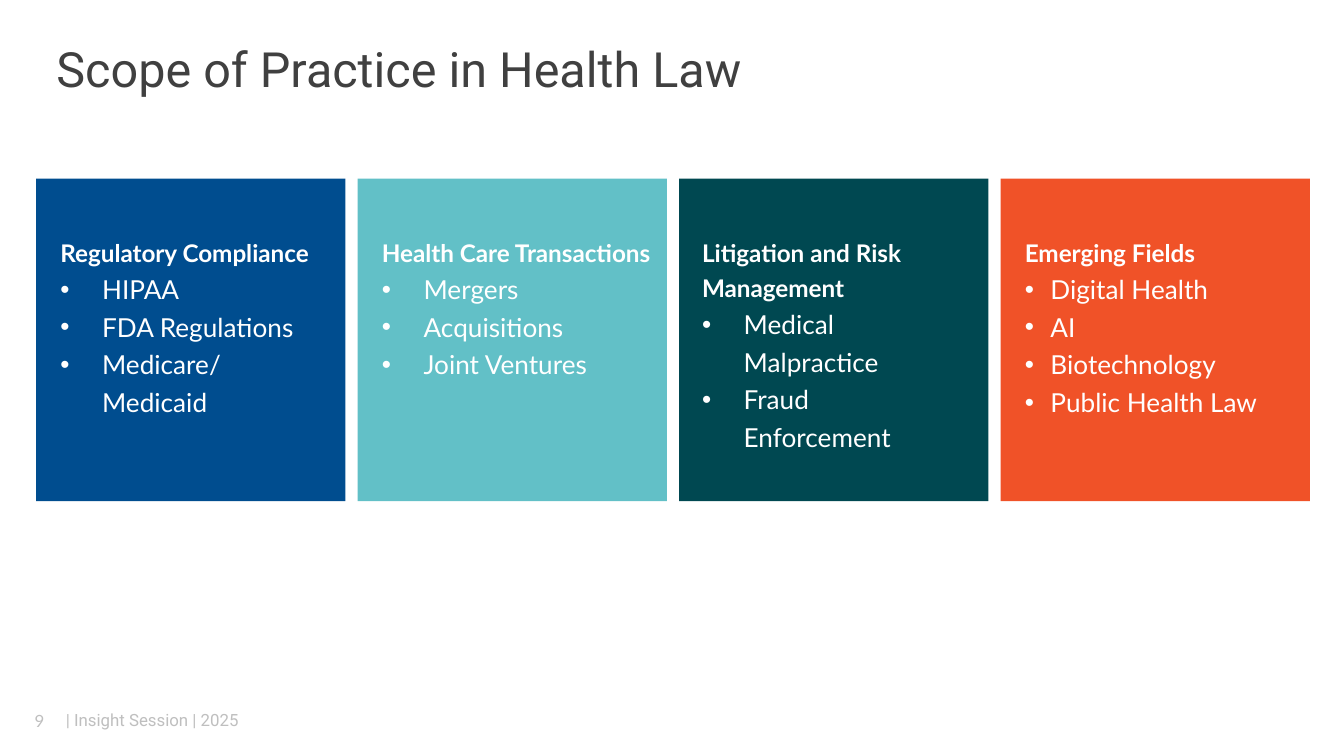
from lxml.etree import SubElement
from pptx import Presentation
from pptx.dml.color import RGBColor
from pptx.enum.shapes import MSO_SHAPE as Shape
from pptx.enum.text import MSO_ANCHOR as Anchor, PP_ALIGN as Align
from pptx.oxml.ns import qn
from pptx.util import Inches, Pt

COLUMNS = 100  # square grid cells, a tenth of an inch each
ROWS = COLUMNS * 9 / 16

# Fill, heading, bullet hang, text inset, text width, text height, items
CARDS = [
    ("004D8F", "Regulatory Compliance", 3.1, 1.8, 19.3, 11.9,
     ["HIPAA", "FDA Regulations", "Medicare/Medicaid"]),
    ("62C0C7", "Health Care Transactions", 3.1, 1.8, 20.7, 11.9,
     ["Mergers", "Acquisitions", "Joint Ventures"]),
    ("004851", "Litigation and Risk Management", 3.1, 1.7, 19.3, 15,
     ["Medical Malpractice", "Fraud Enforcement"]),
    ("F05228", "Emerging Fields", 1.9, 1.8, 19.3, 17.8,
     ["Digital Health", "AI", "Biotechnology", "Public Health Law"]),
]


def color(value):
    return RGBColor.from_string(value)


def write(paragraph, text, size=14, font="Lato", fill="FFFFFF", bold=False,
          align=Align.LEFT, spacing=1.0):
    paragraph.alignment = align
    paragraph.line_spacing = spacing
    run = paragraph.add_run()
    run.text = text
    run.font.name, run.font.size, run.font.bold = font, Pt(size), bold
    run.font.color.rgb = color(fill)


class SlideBuilder:
    footer = {"size": 9, "fill": "BFBFBF"}
    body = {"spacing": 1.2}

    def __init__(self, presentation):
        self.cell_width = presentation.slide_width / COLUMNS
        self.cell_height = presentation.slide_height / ROWS
        self.slide = presentation.slides.add_slide(presentation.slide_layouts[6])

    def place(self, column, row, width, height):
        return (round(column * self.cell_width), round(row * self.cell_height),
                round(width * self.cell_width), round(height * self.cell_height))

    def panel(self, area, fill):
        shape = self.slide.shapes.add_shape(Shape.RECTANGLE, *self.place(*area))
        shape.shadow.inherit = False
        shape.fill.solid()
        shape.fill.fore_color.rgb = color(fill)
        shape.line.fill.background()

    def frame(self, area, side=0, edge=0, anchor=Anchor.MIDDLE):
        frame = self.slide.shapes.add_textbox(*self.place(*area)).text_frame
        frame.word_wrap = True
        frame.vertical_anchor = anchor
        frame.margin_left = frame.margin_right = Inches(side)
        frame.margin_top = frame.margin_bottom = Inches(edge)
        return frame

    def label(self, area, text, side=0, edge=0, **style):
        write(self.frame(area, side, edge).paragraphs[0], text, **style)

    def bullet(self, paragraph, hang):
        properties = paragraph._p.get_or_add_pPr()
        indent = round(hang * self.cell_width)
        properties.set("marL", str(indent))
        properties.set("indent", str(-indent))
        SubElement(properties, qn("a:buFont"), typeface="Arial")
        SubElement(properties, qn("a:buChar"), char="•")

    def card_text(self, area, heading, items, hang):
        frame = self.frame(area, edge=0.05, anchor=Anchor.TOP)
        write(frame.paragraphs[0], heading, size=13, bold=True, **self.body)
        for item in items:
            paragraph = frame.add_paragraph()
            self.bullet(paragraph, hang)
            write(paragraph, item, **self.body)


def main():
    presentation = Presentation()
    presentation.slide_width = Inches(10)
    presentation.slide_height = Inches(10) * 9 // 16
    builder = SlideBuilder(presentation)

    # Footer
    builder.label((0.8, 52.1, 4.3, 3), "9", side=0.1, edge=0.05,
                  align=Align.CENTER, **builder.footer)
    builder.label((4.9, 52.8, 20, 1.5), "| Insight Session | 2025",
                  font="Roboto", **builder.footer)

    # Title
    builder.label((4.2, 3.1, 91.5, 4.5), "Scope of Practice in Health Law",
                  size=26, font="Roboto", fill="404040", spacing=0.9)

    # Four practice areas at an equal pitch
    for index, (fill, heading, hang, inset, width, height, items) in enumerate(CARDS):
        left = 2.7 + index * 23.92
        builder.panel((left, 13.3, 23, 24), fill)
        builder.card_text((left + inset, 16.8, width, height), heading, items, hang)

    presentation.save("out.pptx")


if __name__ == "__main__":
    main()
